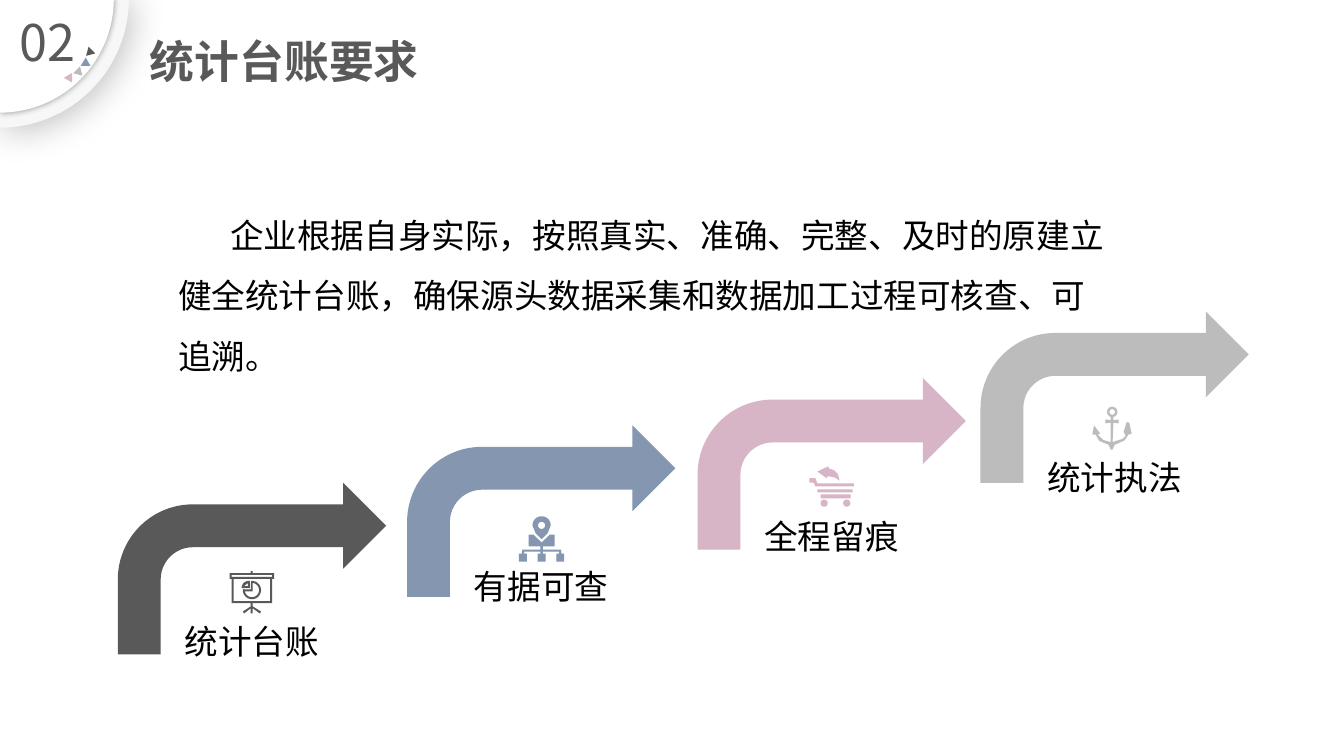
import math
from lxml import etree
from pptx import Presentation
from pptx.dml.color import RGBColor
from pptx.enum import shapes, text
from pptx.oxml import ns
from pptx.util import Cm, Pt

COLORS = {"dark": "595959", "blue": "8496B0", "pink": "D7B5C6", "grey": "BCBCBC",
          "rim": "F7F7F7", "white": "FFFFFF", "black": "000000"}
CJK = "Noto Sans CJK SC"


def arc(cx, cy, radius, start, end, steps=32):
    """Points along a circle, clockwise in degrees from the right."""
    angles = [math.radians(start + (end - start) * i / steps) for i in range(steps + 1)]
    return [(cx + radius * math.cos(a), cy + radius * math.sin(a)) for a in angles]


def draw(contours, color, left=0, top=0):
    """Fill contours in cm; a contour is a point list or a (left, top, right, bottom) box."""
    builder = None
    for c in contours:
        if isinstance(c, tuple):
            l, t, r, b = c
            c = [(l, t), (r, t), (r, b), (l, b)]
        points = [(Cm(left + x), Cm(top + y)) for x, y in c]
        if builder is None:
            builder = s.shapes.build_freeform(*points[0], scale=1.0)
        else:
            builder.move_to(*points[0])
        builder.add_line_segments(points[1:], close=True)
    sp = builder.convert_to_shape()
    sp.shadow.inherit = False
    sp.fill.solid()
    sp.fill.fore_color.rgb = RGBColor.from_string(COLORS[color])
    sp.line.fill.background()
    return sp


prs = Presentation()
prs.slide_width, prs.slide_height = Cm(33.87), Cm(19.05)
s = prs.slides.add_slide(prs.slide_layouts[6])

# Corner badge: two quarter discs with soft shadows, then four small triangles
for radius, color, alpha, blur, dist, angle in [(3.25, "rim", 25, 26, 3, 45),
                                                (2.87, "white", 40, 5, 0, 0)]:
    disc = draw([[(0, -0.03)] + arc(0, -0.03, radius, 0, 90)], color)
    effects = disc._element.spPr.find(ns.qn("a:effectLst"))
    shadow = etree.SubElement(effects, ns.qn("a:outerShdw"), blurRad=str(Pt(blur)),
                              dist=str(Pt(dist)), dir=str(angle * 60000),
                              algn="tl", rotWithShape="0")
    tint = etree.SubElement(shadow, ns.qn("a:srgbClr"), val=COLORS["black"])
    etree.SubElement(tint, ns.qn("a:alpha"), val=str(alpha * 1000))

triangles = [("dark", 2.27, 1.31), ("blue", 2.16, 1.59), ("grey", 1.98, 1.81), ("pink", 1.75, 1.96)]
for i, (color, x, y) in enumerate(triangles):
    apex = -105 + 15 * i
    draw([arc(x, y, 0.14, apex, apex + 240, 2)], color)

# Icon outlines, in cm from the icon's own corner
board = [
    (0.53, 0, 0.58, 0.05), (0, 0.05, 1.12, 0.2), (0.05, 0.1, 1.07, 0.15),
    (0.05, 0.2, 1.07, 0.81), (0.1, 0.2, 1.02, 0.76),
    [(0.53, 0.81), (0.58, 0.81), (0.58, 0.89), (0.79, 1.02), (0.76, 1.07), (0.58, 0.94),
     (0.58, 1.07), (0.53, 1.07), (0.53, 0.94), (0.36, 1.07), (0.33, 1.02), (0.53, 0.89)],
    arc(0.56, 0.48, 0.23, -95, 185) + [(0.53, 0.46)],
    arc(0.56, 0.48, 0.18, -84, 170) + [(0.58, 0.51)],
    arc(0.48, 0.43, 0.18, 180, 270) + [(0.51, 0.25), (0.51, 0.43)],
    [(0.36, 0.38), (0.46, 0.3), (0.46, 0.38)],
]
site_map = [
    arc(0.57, 0.23, 0.23, 180, 360) + [(0.72, 0.43), (0.57, 0.58), (0.42, 0.43)],
    arc(0.57, 0.23, 0.09, 0, 360),
    [(0.24, 0.46), (0.36, 0.46), (0.57, 0.66), (0.78, 0.46), (0.9, 0.46), (0.9, 0.76), (0.24, 0.76)],
    (0.54, 0.76, 0.6, 0.84), (0.08, 0.84, 1.06, 0.89),
]
for x in (0.1, 0.57, 1.04):
    site_map += [(x - 0.03, 0.89, x + 0.03, 0.94), (x - 0.1, 0.94, x + 0.1, 1.14)]
cart = [
    arc(0.37, 0.93, 0.09, 0, 360), arc(0.94, 0.93, 0.09, 0, 360),
    (0.28, 0.71, 1.04, 0.81), (0.2, 0.58, 1.09, 0.66),
    [(0, 0.3), (0.15, 0.3), (0.2, 0.43), (1.12, 0.43), (1.12, 0.51), (0.15, 0.51),
     (0.1, 0.41), (0, 0.41)],
    [(0.48, 0), (0.48, 0.05), (0.62, 0.1), (0.72, 0.2), (0.76, 0.36), (0.63, 0.28),
     (0.46, 0.25), (0.43, 0.3), (0.2, 0.13)],
]
anchor = [
    arc(0.5, 0.14, 0.13, 0, 360), arc(0.5, 0.14, 0.07, 0, 360),
    [(0.46, 0.27), (0.53, 0.27), (0.53, 0.35), (0.66, 0.33), (0.66, 0.43), (0.53, 0.41),
     (0.51, 0.9), (0.76, 0.82), (0.84, 0.74), (0.79, 0.64), (0.86, 0.4), (0.93, 0.41),
     (0.99, 0.69), (0.91, 0.71), (0.81, 0.86), (0.56, 0.97), (0.51, 1.09), (0.46, 1.09),
     (0.41, 0.97), (0.17, 0.87), (0.08, 0.71), (0, 0.71), (0.04, 0.48), (0.2, 0.69),
     (0.13, 0.71), (0.28, 0.85), (0.46, 0.9), (0.46, 0.41), (0.33, 0.43), (0.33, 0.33),
     (0.46, 0.35)],
]

# Text boxes: wording, box in cm, frame, paragraph and font formats
texts = [
    ("02", (0.1, 0.15, 2.21, 1.8), {"word_wrap": True}, {"alignment": text.PP_ALIGN.CENTER},
     {"size": Pt(36), "name": CJK}, "dark"),
    ("统计台账要求", (3.53, 1.04, 23.01, 1.32),
     {"word_wrap": True, "vertical_anchor": text.MSO_ANCHOR.BOTTOM}, {"line_spacing": 0.9},
     {"size": Pt(32), "name": CJK, "bold": True}, "dark"),
]
label_frame = {"word_wrap": False, "vertical_anchor": text.MSO_ANCHOR.MIDDLE, "margin_left": 0,
               "margin_right": 0, "margin_top": 0, "margin_bottom": 0}
plain = {"size": Pt(24), "name": "Arial"}

# Four rising steps: arrow, icon, label
steps = [("统计台账", "dark", board, 2.97, 12.17, 2.95), ("有据可查", "blue", site_map, 10.26, 10.72, 3.02),
         ("全程留痕", "pink", cart, 17.58, 9.53, 2.95), ("统计执法", "grey", anchor, 24.71, 7.85, 3.12)]
for label, color, icon, x, y, drop in steps:
    arrow = s.shapes.add_shape(shapes.MSO_SHAPE.BENT_ARROW, Cm(x), Cm(y), Cm(6.76), Cm(4.32))
    arrow.shadow.inherit = False
    arrow.fill.solid()
    arrow.fill.fore_color.rgb = RGBColor.from_string(COLORS[color])
    arrow.line.fill.background()
    draw(icon, color, x + 2.82, y + drop - 0.73)
    texts.append((label, (x + 1.19, y + drop, 4.37, 2.08), label_frame,
                  {"alignment": text.PP_ALIGN.CENTER}, plain, "black"))

texts.append(("企业根据自身实际，按照真实、准确、完整、及时的原建立健全统计台账，"
              "确保源头数据采集和数据加工过程可核查、可追溯。", (4.24, 4.78, 23.95, 4.88),
              {"word_wrap": True}, {"line_spacing": 1.5}, plain, "black"))

for wording, box, frame, paragraph, font, color in texts:
    tf = s.shapes.add_textbox(*map(Cm, box)).text_frame
    p = tf.paragraphs[0]
    r = p.add_run()
    r.text = wording
    for target, formats in ((tf, frame), (p, paragraph), (r.font, font)):
        for key, value in formats.items():
            setattr(target, key, value)
    r.font.color.rgb = RGBColor.from_string(COLORS[color])
    etree.SubElement(r._r.get_or_add_rPr(), ns.qn("a:ea"), typeface=CJK)

# The body text, written last, has an indented first line
p._p.get_or_add_pPr().set("indent", str(Cm(1.31)))

prs.save("out.pptx")
